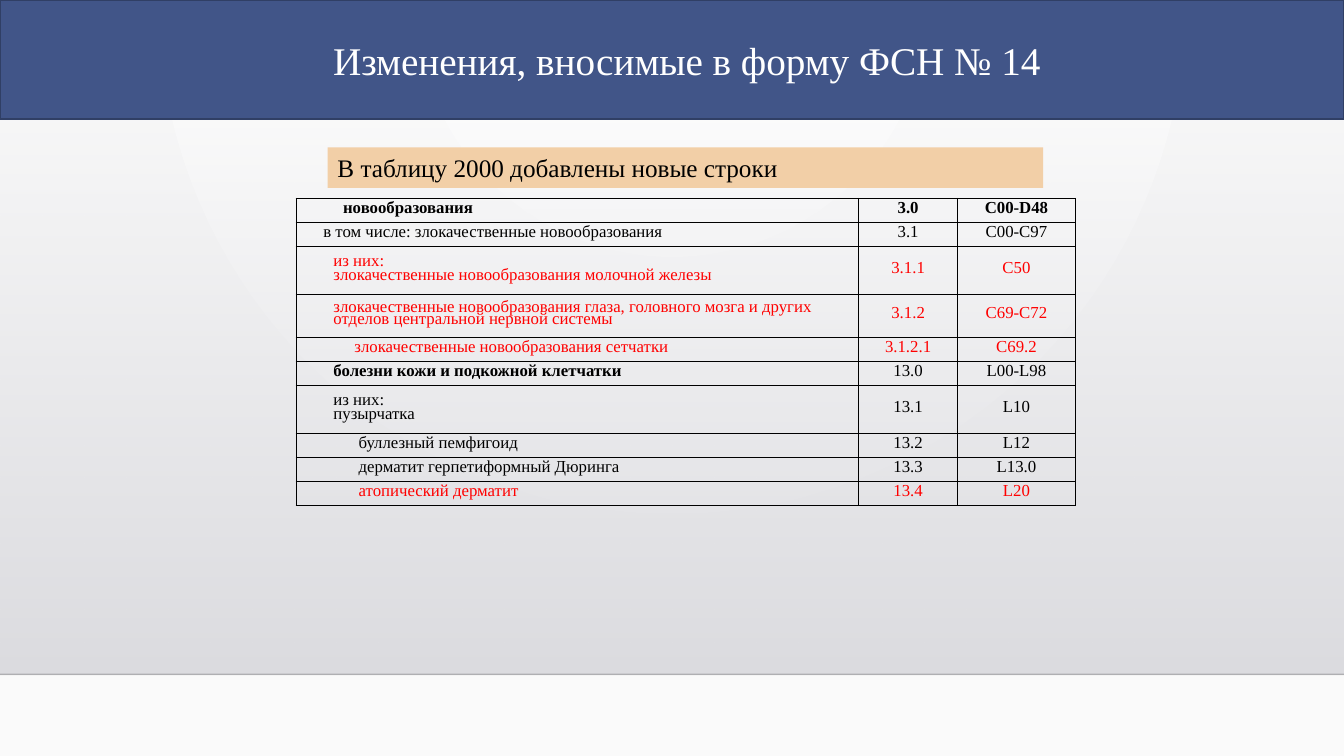
from dataclasses import dataclass

from lxml.etree import SubElement
from pptx import Presentation
from pptx.dml.color import RGBColor
from pptx.enum.shapes import MSO_CONNECTOR, MSO_SHAPE
from pptx.enum.text import MSO_ANCHOR as Anchor, PP_ALIGN as Align
from pptx.oxml.ns import qn
from pptx.util import Pt

FONT = "Times New Roman"
WIDTH, HEIGHT = 960, 540
COLORS = {
    "black": "000000", "white": "FFFFFF", "red": "FF0000",
    "header": "415588", "header_line": "303F65", "caption": "F2CFA7",
    "back": "FAFAFA", "body_top": "DCDCE0", "body_bottom": "DEDEE2",
}


@dataclass
class Row:
    name: str
    number: str
    code: str
    indent: float = 21.6
    height: float = 17.1
    spacing: float = 10
    color: str = "black"
    bold_name: bool = False
    bold_codes: bool = False


ROWS = [
    Row("новообразования", "3.0", "С00-D48", 28.5, bold_name=True, bold_codes=True),
    Row("в том числе: злокачественные новообразования", "3.1", "С00-С97", 14.4),
    Row("из них:\nзлокачественные новообразования молочной железы",
        "3.1.1", "С50", height=34.2, color="red"),
    Row("злокачественные новообразования глаза, головного мозга и других "
        "отделов центральной нервной системы",
        "3.1.2", "С69-С72", height=31, spacing=9, color="red"),
    Row("злокачественные новообразования сетчатки", "3.1.2.1", "C69.2", 36.6, color="red"),
    Row("болезни кожи и подкожной клетчатки", "13.0", "L00-L98", bold_name=True),
    Row("из них:\nпузырчатка", "13.1", "L10", height=34.2),
    Row("буллезный пемфигоид", "13.2", "L12", 39.6),
    Row("дерматит герпетиформный Дюринга", "13.3", "L13.0", 39.6),
    Row("атопический дерматит", "13.4", "L20", 39.6, color="red"),
]
COLUMNS = [401.8, 70.6, 84.2]


def rgb(name: str) -> RGBColor:
    return RGBColor.from_string(COLORS[name])


def write(tf, text: str, size: float, color: str = "black", bold: bool = False,
          align=Align.LEFT, indent: float = 0, spacing: float = 0) -> None:
    """Fill a text frame, one paragraph per line of text."""
    tf.word_wrap = True
    for i, line in enumerate(text.split("\n")):
        p = tf.add_paragraph() if i else tf.paragraphs[0]
        p.alignment = align
        p._p.get_or_add_pPr().set("marL", str(Pt(indent)))
        if spacing:
            p.line_spacing = Pt(spacing)
        r = p.add_run()
        r.text = line
        r.font.name, r.font.size, r.font.bold = FONT, Pt(size), bold
        r.font.color.rgb = rgb(color)


def add_rect(s, x: float, y: float, w: float, h: float):
    sp = s.shapes.add_shape(MSO_SHAPE.RECTANGLE, Pt(x), Pt(y), Pt(w), Pt(h))
    sp.shadow.inherit = False
    sp.line.fill.background()
    return sp


def set_gradient(fill, first: str, last: str) -> None:
    fill.gradient()
    for stop, color, position in zip(fill.gradient_stops, (first, last), (0, 1)):
        stop.color.rgb = rgb(color)
        stop.position = position


def set_alpha(color_element, percent: int) -> None:
    SubElement(color_element, qn("a:alpha")).set("val", str(percent * 1000))


def add_borders(cell, width: float = 1) -> None:
    tc_pr = cell._tc.get_or_add_tcPr()
    for side in ("lnL", "lnR", "lnT", "lnB"):
        ln = SubElement(tc_pr, qn(f"a:{side}"), w=str(Pt(width)))
        fill = SubElement(ln, qn("a:solidFill"))
        SubElement(fill, qn("a:srgbClr"), val=COLORS["black"])


def add_background(s) -> None:
    set_gradient(s.background.fill, "white", "back")
    grad = next(s._element.iter(qn("a:gradFill")))
    grad.remove(grad.find(qn("a:lin")))
    path = SubElement(grad, qn("a:path"), path="circle")
    SubElement(path, qn("a:fillToRect"), l="43000", t="0", r="43000", b="100000")

    # Grey body fading in from the top
    body = add_rect(s, 0, 36.7, WIDTH, 445)
    set_gradient(body.fill, "body_top", "body_bottom")
    body.fill.gradient_angle = 270
    set_alpha(next(body._element.iter(qn("a:srgbClr"))), 0)

    # Thin rule above the footer
    rule = s.shapes.add_connector(MSO_CONNECTOR.STRAIGHT, 0, Pt(481.7), Pt(WIDTH), Pt(481.7))
    rule.line.width = Pt(1)
    rule.line.color.rgb = rgb("black")
    set_alpha(next(rule._element.iter(qn("a:srgbClr"))), 20)
    SubElement(rule._element.spPr, qn("a:effectLst"))


def add_rows_table(s, x: float, y: float) -> None:
    frame = s.shapes.add_table(len(ROWS), len(COLUMNS), Pt(x), Pt(y),
                               Pt(sum(COLUMNS)), Pt(sum(row.height for row in ROWS)))
    table = frame.table
    table.first_row = table.horz_banding = False
    for column, width in zip(table.columns, COLUMNS):
        column.width = Pt(width)
    for i, row in enumerate(ROWS):
        table.rows[i].height = Pt(row.height)
        for j, text in enumerate((row.name, row.number, row.code)):
            cell = table.cell(i, j)
            cell.vertical_anchor = Anchor.MIDDLE
            cell.margin_left = cell.margin_right = Pt(5)
            cell.margin_top = cell.margin_bottom = 0
            add_borders(cell)
            cell.fill.background()
            write(cell.text_frame, text, 12, color=row.color, spacing=row.spacing,
                  bold=row.bold_codes if j else row.bold_name,
                  align=Align.CENTER if j else Align.LEFT,
                  indent=0 if j else row.indent)


def main() -> None:
    prs = Presentation()
    prs.slide_width, prs.slide_height = Pt(WIDTH), Pt(HEIGHT)
    s = prs.slides.add_slide(prs.slide_layouts[6])
    add_background(s)

    # Header band
    header = add_rect(s, 0, 0, WIDTH, 85)
    header.fill.solid()
    header.fill.fore_color.rgb = rgb("header")
    header.line.color.rgb = rgb("header_line")
    header.line.width = Pt(1.25)
    header.text_frame.vertical_anchor = Anchor.MIDDLE
    write(header.text_frame, "Изменения, вносимые в форму ФСН № 14", 28,
          color="white", align=Align.CENTER, indent=21)

    # Caption above the table
    caption = add_rect(s, 234, 105.2, 511.2, 29)
    caption.fill.solid()
    caption.fill.fore_color.rgb = rgb("caption")
    caption.text_frame.vertical_anchor = Anchor.TOP
    write(caption.text_frame, "В таблицу 2000 добавлены новые строки", 18)

    add_rows_table(s, 211.6, 141.8)
    prs.save("out.pptx")


if __name__ == "__main__":
    main()
